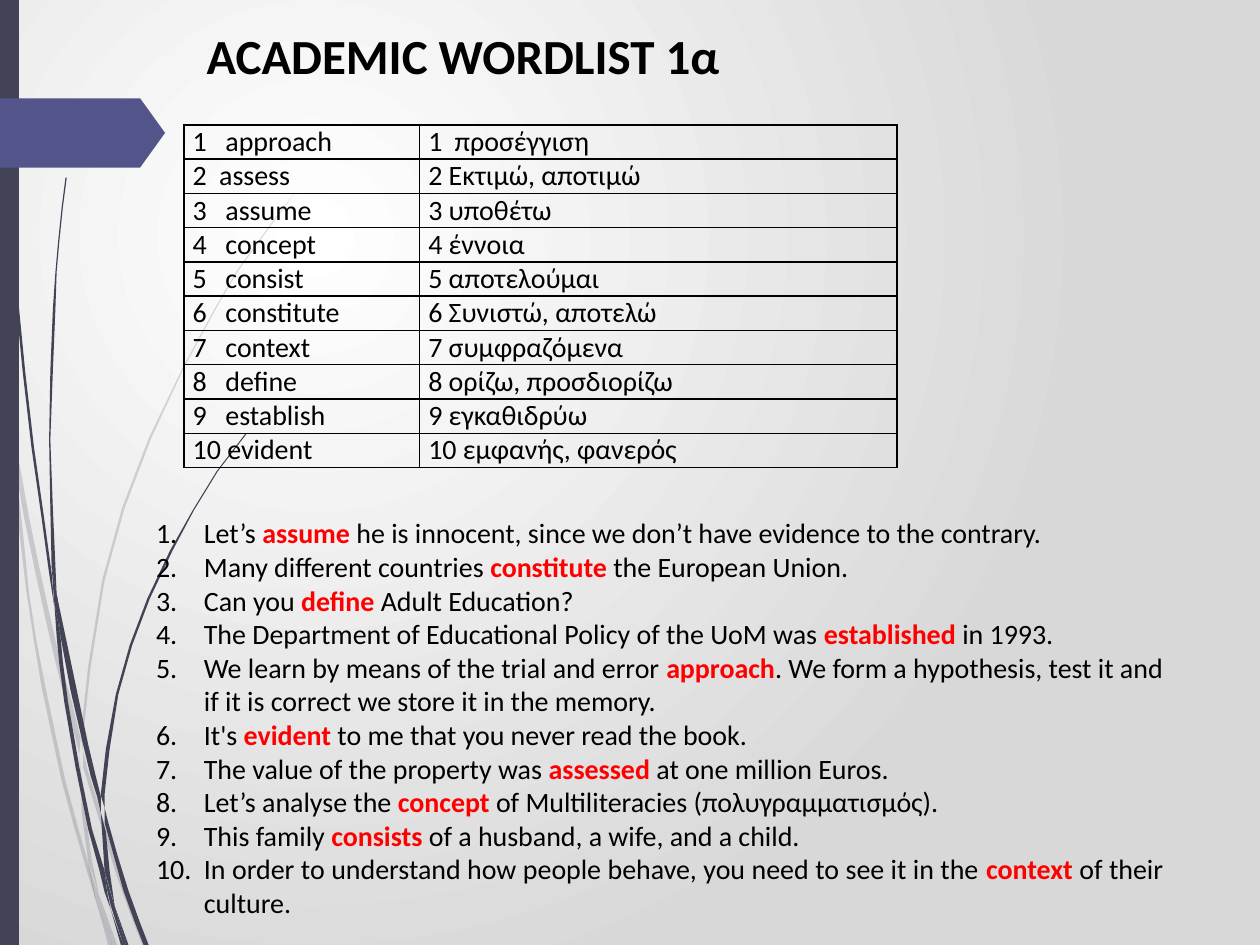
from lxml.etree import SubElement
from pptx import Presentation
from pptx.dml.color import RGBColor
from pptx.enum.shapes import MSO_SHAPE as Shape
from pptx.enum.text import MSO_ANCHOR as Anchor, PP_ALIGN as Align
from pptx.oxml import parse_xml
from pptx.oxml.ns import nsdecls, qn
from pptx.util import Inches, Pt

INK, ACCENT, BLACK, RED = "424456", "53548A", "000000", "FF0000"


def color(value):
    return RGBColor.from_string(value)


def set_font(font, size, bold=False):
    font.name, font.size, font.bold = "Calibri", Pt(size), bold
    font.color.rgb = color(BLACK)


presentation = Presentation()
presentation.slide_width, presentation.slide_height = Inches(10), Inches(7.5)
column = presentation.slide_width // 100
row = presentation.slide_height // 75
slide = presentation.slides.add_slide(presentation.slide_layouts[5])
shapes = slide.shapes

backdrop = slide.background.fill
backdrop.gradient()
for stop, value in zip(backdrop.gradient_stops, ("FFFFFF", "D8D8D8")):
    stop.color.rgb = color(value)
gradient = slide.background._cSld.find(".//" + qn("a:gradFill"))
linear = gradient.find(qn("a:lin"))
gradient.replace(linear, parse_xml(
    f'<a:path {nsdecls("a")} path="circle">'
    '<a:fillToRect l="50000" t="50000" r="100000" b="100000"/></a:path>'))

pale_stems = [
    [(345, 11, 11), (376, 13, 17), (449, 27, 31), (521, 43, 47), (586, 60, 64), (599, 63, 63)],
    [(596, 66, 66), (609, 66, 69), (693, 92, 95), (750, 113, 116)],
    [(711, 79, 79), (750, 89, 93)],
    [(350, 8, 8), (376, 10, 13), (470, 21, 23), (545, 33, 36), (620, 49, 52),
     (688, 68, 71), (714, 76, 76)],
    [(599, 63, 63), (646, 65, 68), (683, 70, 73), (711, 79, 79)],
    [(153, 234, 234), (175, 217, 218), (197, 201, 202), (244, 171, 172),
     (348, 118, 120), (461, 81, 83), (584, 64, 66), (596, 66, 66)],
    [(714, 76, 76), (750, 86, 89)],
    [(683, 70, 70), (692, 71, 72), (712, 75, 79), (750, 89, 89)],
]
dark_stems = [
    [(0, 2, 3), (110, 5, 6), (233, 12, 14), (355, 25, 27), (455, 39, 41), (481, 43, 43)],
    [(472, 45, 45), (505, 48, 52), (591, 66, 70), (632, 77, 80), (645, 80, 80)],
    [(641, 83, 83), (653, 83, 86), (707, 98, 102), (750, 114, 118)],
    [(477, 43, 43), (505, 45, 48), (557, 51, 54), (658, 70, 73), (691, 79, 83),
     (708, 83, 85), (722, 88, 88)],
    [(141, 52, 53), (193, 46, 47), (245, 42, 44), (349, 39, 40), (449, 41, 44), (472, 45, 45)],
    [(719, 91, 91), (750, 100, 102)],
    [(449, 41, 41), (477, 43, 46), (505, 48, 48)],
    [(344, 195, 196), (374, 172, 173), (405, 153, 154),
     (475, 117, 119), (551, 92, 94), (631, 80, 83), (641, 83, 83)],
    [(722, 88, 88), (750, 96, 98)],
    [(645, 80, 80), (660, 81, 84), (691, 83, 87), (719, 91, 91)],
    [(691, 83, 83), (706, 85, 87), (719, 88, 91), (750, 98, 100)],
]
for stems, alpha in ((pale_stems, 20), (dark_stems, 100)):
    for spans in stems:
        padded = [spans[0], *spans, spans[-1]]
        smooth = [spans[0]]
        for before, start, end, after in zip(padded, padded[1:], padded[2:], padded[3:]):
            if end[0] - start[0] > 40:
                smooth.append([(9 * (b + c) - a - d) / 16
                               for a, b, c, d in zip(before, start, end, after)])
            smooth.append(end)
        outline = [(left, y) for y, left, right in smooth]
        outline += [(right, y) for y, left, right in reversed(smooth)]
        builder = shapes.build_freeform(*outline[0], scale=column / 10)
        builder.add_line_segments(outline[1:])
        stem = builder.convert_to_shape()
        stem.shadow.inherit = False
        stem.fill.solid()
        stem.fill.fore_color.rgb = color(INK)
        stem.line.fill.background()
        if alpha < 100:
            shade = stem._element.spPr.find(qn("a:solidFill"))[0]
            SubElement(shade, qn("a:alpha"), val=str(alpha * 1000))

for preset, top, width, height, value in (
        (Shape.RECTANGLE, 0, 1.5, 75, INK), (Shape.PENTAGON, 7.8, 13.1, 5.5, ACCENT)):
    shape = shapes.add_shape(preset, 0, int(top * row), int(width * column), int(height * row))
    shape.shadow.inherit = False
    shape.fill.solid()
    shape.fill.fore_color.rgb = color(value)
    shape.line.fill.background()
    if preset == Shape.PENTAGON:
        shape.adjustments[0] = 0.36

words = [
    ("1\tapproach", "1\tπροσέγγιση"), ("2\tassess", "2 Εκτιμώ, αποτιμώ"),
    ("3\tassume", "3 υποθέτω"), ("4\tconcept", "4 έννοια"),
    ("5\tconsist", "5 αποτελούμαι"), ("6\tconstitute", "6 Συνιστώ, αποτελώ"),
    ("7\tcontext", "7 συμφραζόμενα"), ("8\tdefine", "8 ορίζω, προσδιορίζω"),
    ("9\testablish", "9 εγκαθιδρύω"), ("10 evident", "10 εμφανής, φανερός"),
]
narrow_tabs = ("2\tassess", "1\tπροσέγγιση")
table = shapes.add_table(len(words), 2, int(14.6 * column), int(9.9 * row),
                         int(56.6 * column), int(26.7 * row)).table
table.first_row = table.horz_banding = False
table.columns[0].width, table.columns[1].width = int(18.7 * column), int(37.9 * column)
for table_row, pair in zip(table.rows, words):
    for cell, text in zip(table_row.cells, pair):
        cell.margin_left = cell.margin_right = int(0.7 * column)
        cell.margin_top = cell.margin_bottom = 0
        cell.fill.background()
        for index, side in enumerate("LRTB"):
            cell._tc.tcPr.insert(index, parse_xml(
                f'<a:ln{side} {nsdecls("a")} w="12700"><a:solidFill>'
                f'<a:srgbClr val="{BLACK}"/></a:solidFill></a:ln{side}>'))
        cell.text = text
        paragraph = cell.text_frame.paragraphs[0]
        paragraph.alignment = Align.JUSTIFY
        if "\t" in text:
            tabs = SubElement(paragraph._p.get_or_add_pPr(), qn("a:tabLst"))
            position = int((2.1 if text in narrow_tabs else 2.6) * column)
            SubElement(tabs, qn("a:tab"), pos=str(position), algn="l")
        set_font(paragraph.font, 16)

title = shapes.title
title.left, title.top = int(15.4 * column), int(1.5 * row)
title.width, title.height = int(66.9 * column), int(8.8 * row)
title.text_frame.text = "ACADEMIC WORDLIST 1α"
title.text_frame.vertical_anchor = Anchor.TOP
paragraph = title.text_frame.paragraphs[0]
paragraph.alignment = Align.LEFT
set_font(paragraph.font, 28, True)
shapes._spTree.append(title._element)

sentences = [
    ("Let’s ", "assume ", "he is innocent, since we don’t have evidence to the contrary."),
    ("Many different countries ", "constitute ", "the European Union."),
    ("Can you ", "define ", "Adult Education?"),
    ("The Department of Educational Policy of the UoM was ", "established ", "in 1993."),
    ("We learn by means of the trial and error ", "approach",
     ". We form a hypothesis, test it and if it is correct we store it in the memory."),
    ("It's ", "evident ", "to me that you never read the book."),
    ("The value of the property was ", "assessed ", "at one million Euros."),
    ("Let’s analyse the ", "concept ", "of Multiliteracies (πολυγραμματισμός)."),
    ("This family ", "consists ", "of a husband, a wife, and a child."),
    ("In order to understand how people behave, you need to see it in the ", "context ",
     "of their culture."),
]
exercise = shapes.add_textbox(int(11.4 * column), int(40.3 * row),
                              int(81.9 * column), int(33.3 * row)).text_frame
exercise.word_wrap = True
exercise.vertical_anchor = Anchor.MIDDLE
for index, parts in enumerate(sentences):
    paragraph = exercise.add_paragraph() if index else exercise.paragraphs[0]
    paragraph.alignment = Align.JUSTIFY
    properties = paragraph._p.get_or_add_pPr()
    properties.set("marL", str(int(3.8 * column)))
    properties.set("indent", str(int(-3.8 * column)))
    SubElement(properties, qn("a:buFont"), typeface="+mj-lt")
    SubElement(properties, qn("a:buAutoNum"), type="arabicPeriod")
    set_font(paragraph.font, 16)
    for part in parts:
        run = paragraph.add_run()
        run.text = part
        if part == parts[1]:
            run.font.bold = True
            run.font.color.rgb = color(RED)

presentation.save("out.pptx")
